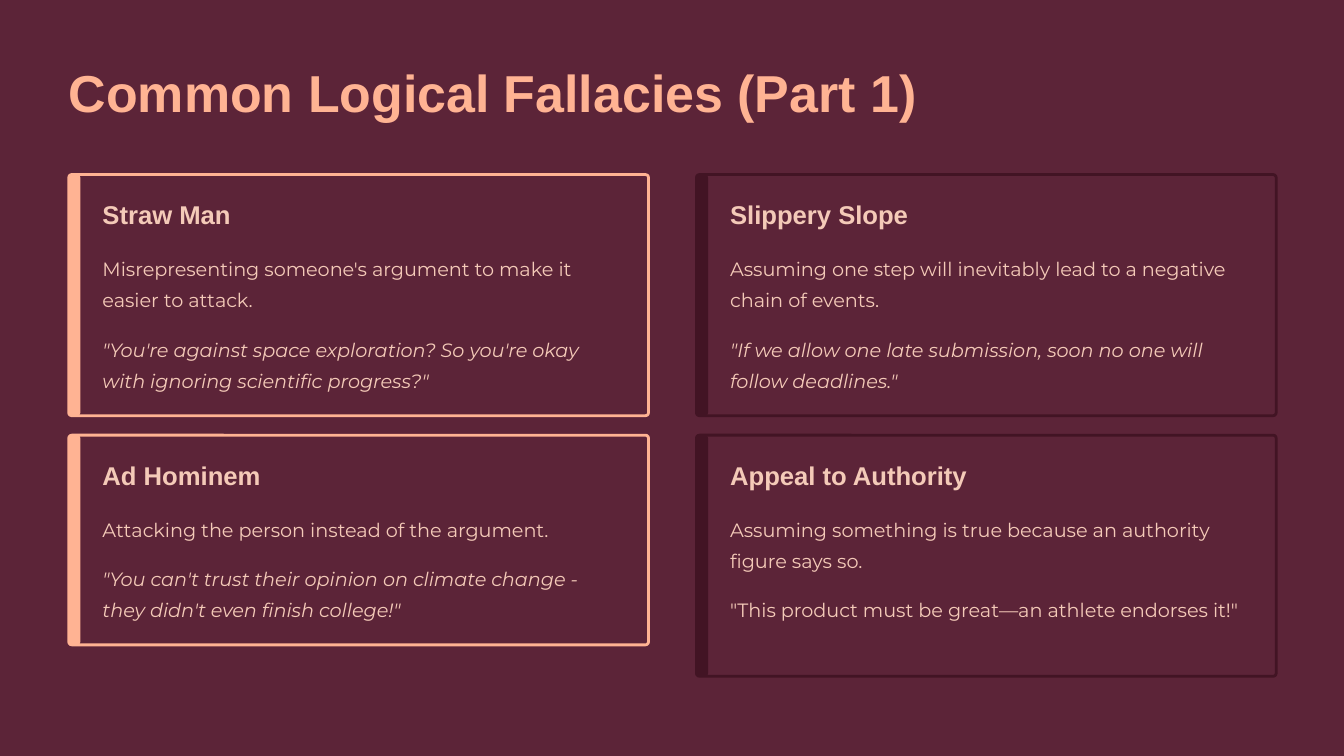
import pptx
import pptx.dml.color
import pptx.enum.shapes
import pptx.util

Cm = pptx.util.Cm
Pt = pptx.util.Pt

TITLE = "Common Logical Fallacies (Part 1)"
PLUM, PEACH, WINE, BLUSH = "5C2438", "FFB393", "421424", "F4CAB8"

COLUMNS = [
    (PEACH, [
        ("Straw Man",
         "Misrepresenting someone's argument to make it easier to attack.", 2,
         "\"You're against space exploration? So you're okay with ignoring scientific progress?\"", True),
        ("Ad Hominem",
         "Attacking the person instead of the argument.", 1,
         "\"You can't trust their opinion on climate change - they didn't even finish college!\"", True),
    ]),
    (WINE, [
        ("Slippery Slope",
         "Assuming one step will inevitably lead to a negative chain of events.", 2,
         "\"If we allow one late submission, soon no one will follow deadlines.\"", True),
        ("Appeal to Authority",
         "Assuming something is true because an authority figure says so.", 2,
         "\"This product must be great—an athlete endorses it!\"", False),
    ]),
]

MARGIN, CARDS_TOP = 2.08, 5.28
TITLE_TOP, TITLE_WIDTH, TITLE_HEIGHT = 1.75, 26.5, 1.98
CARD_WIDTH, COLUMN_STEP, CARD_GAP = 17.53, 18.98, 0.59
BAR_WIDTH, RADIUS = 0.35, 0.09
INDENT, PADDING = 1.02, 0.69
DEFINITION_TOP, LINE_HEIGHT, QUOTE_GAP = 2.27, 0.95, 0.53
NAME_WIDTH, NAME_HEIGHT, TEXT_WIDTH = 7.92, 0.99, 15.82


def color(value):
    return pptx.dml.color.RGBColor.from_string(value)


def add_text(page, text, left, top, width, height, size, spacing, tint,
             font="Montserrat", bold=False, italic=False):
    box = page.shapes.add_textbox(Cm(left), Cm(top), Cm(width), Cm(height))
    frame = box.text_frame
    frame.margin_left = frame.margin_right = frame.margin_top = frame.margin_bottom = 0
    frame.word_wrap = True
    frame.text = text
    para = frame.paragraphs[0]
    para.line_spacing = Pt(spacing)
    span = para.runs[0]
    span.font.name = font
    span.font.size = Pt(size)
    span.font.bold = bold
    span.font.italic = italic
    span.font.color.rgb = color(tint)


def add_panel(page, left, top, width, height, fill, line=None):
    panel = page.shapes.add_shape(pptx.enum.shapes.MSO_SHAPE.ROUNDED_RECTANGLE,
                                  Cm(left), Cm(top), Cm(width), Cm(height))
    panel.adjustments[0] = RADIUS / min(width, height)
    panel.shadow.inherit = False
    panel.fill.solid()
    panel.fill.fore_color.rgb = color(fill)
    if line:
        panel.line.color.rgb = color(line)
        panel.line.width = Pt(2.4)
    else:
        panel.line.fill.background()


def add_card(page, left, top, accent, fallacy):
    name, definition, lines, quote, italic = fallacy
    quote_top = DEFINITION_TOP + lines * LINE_HEIGHT + QUOTE_GAP
    height = quote_top + 2 * LINE_HEIGHT + PADDING
    text_left = left + INDENT
    add_panel(page, left, top, CARD_WIDTH, height, PLUM, accent)
    add_panel(page, left, top, BAR_WIDTH, height, accent)
    add_text(page, name, text_left, top + PADDING, NAME_WIDTH, NAME_HEIGHT,
             22, 28, BLUSH, font="Arial", bold=True)
    add_text(page, definition, text_left, top + DEFINITION_TOP, TEXT_WIDTH,
             lines * LINE_HEIGHT, 16.5, 26.5, BLUSH)
    add_text(page, quote, text_left, top + quote_top, TEXT_WIDTH,
             2 * LINE_HEIGHT, 16.5, 26.5, BLUSH, italic=italic)
    return height


def main():
    deck = pptx.Presentation()
    deck.slide_width, deck.slide_height = Cm(40.64), Cm(22.86)
    page = deck.slides.add_slide(deck.slide_layouts[6])
    page.background.fill.solid()
    page.background.fill.fore_color.rgb = color(PLUM)
    add_text(page, TITLE, MARGIN, TITLE_TOP, TITLE_WIDTH, TITLE_HEIGHT,
             44.5, 56, PEACH, font="Arial", bold=True)
    for column, (accent, fallacies) in enumerate(COLUMNS):
        left, top = MARGIN + column * COLUMN_STEP, CARDS_TOP
        for fallacy in fallacies:
            top += add_card(page, left, top, accent, fallacy) + CARD_GAP
    deck.save("out.pptx")


if __name__ == "__main__":
    main()
